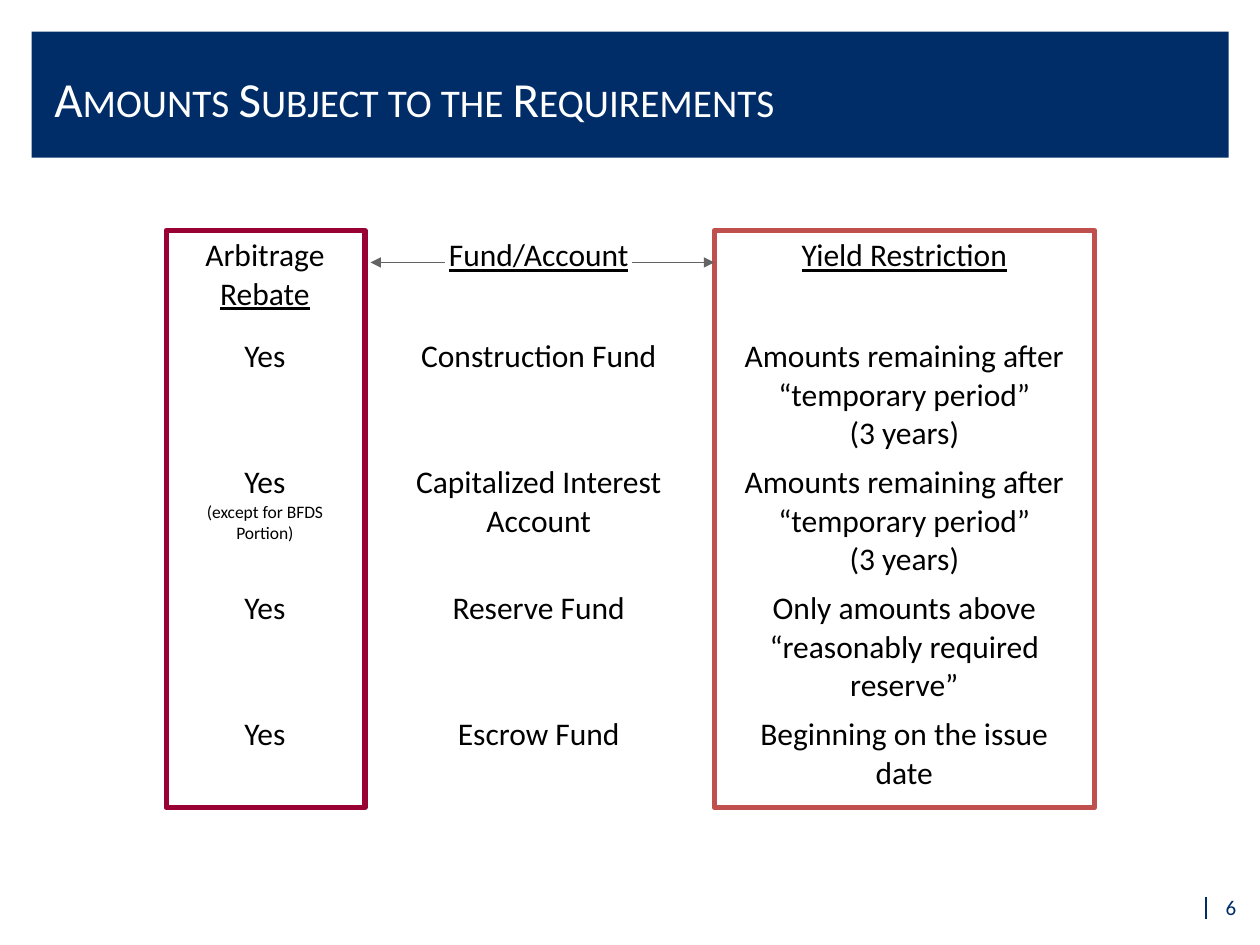
import pptx
import pptx.util
import pptx.dml.color
import pptx.enum.shapes
import pptx.enum.text
import pptx.oxml.ns
import lxml.etree

Cm = pptx.util.Cm
Pt = pptx.util.Pt
ALIGN = pptx.enum.text.PP_ALIGN
MIDDLE = pptx.enum.text.MSO_ANCHOR.MIDDLE
NAVY, BLACK, GREY = "002D68", "000000", "636463"

TEMPORARY_PERIOD = "Amounts remaining after “temporary period”\n(3 years)"
HEADINGS = ["Arbitrage Rebate", "Fund/Account", "Yield Restriction"]
ROWS = [
    ["Yes", "Construction Fund", TEMPORARY_PERIOD],
    ["Yes", "Capitalized Interest Account", TEMPORARY_PERIOD],
    ["Yes", "Reserve Fund", "Only amounts above “reasonably required reserve”"],
    ["Yes", "Escrow Fund", "Beginning on the issue date"],
]
COLUMN_WIDTHS = [3.68, 7.36, 7.38]
ROW_HEIGHTS = [2.03, 2.45, 2.45, 2.45, 1.8]


def color(hex_value):
    return pptx.dml.color.RGBColor.from_string(hex_value)


def add_run(paragraph, text, size, hex_value=BLACK, underline=False):
    """Add text in the slide's font, with a line break at each newline."""
    for index, line in enumerate(text.split("\n")):
        if index:
            paragraph.add_line_break()
        run = paragraph.add_run()
        run.text = line
        run.font.name = "Calibri"
        run.font.size = Pt(size)
        run.font.color.rgb = color(hex_value)
        run.font.underline = underline
    return run


def add_rectangle(slide, left, top, width, height, fill=None, line=None):
    shape = slide.shapes.add_shape(
        pptx.enum.shapes.MSO_SHAPE.RECTANGLE, Cm(left), Cm(top), Cm(width), Cm(height))
    shape.shadow.inherit = False
    if fill:
        shape.fill.solid()
        shape.fill.fore_color.rgb = color(fill)
    else:
        shape.fill.background()
    if line:
        shape.line.color.rgb = color(line)
        shape.line.width = Pt(3)
    else:
        shape.line.fill.background()


def add_line(slide, start, end, hex_value, width, arrow=False):
    connector = slide.shapes.add_connector(
        pptx.enum.shapes.MSO_CONNECTOR.STRAIGHT,
        Cm(start[0]), Cm(start[1]), Cm(end[0]), Cm(end[1]))
    connector.line.color.rgb = color(hex_value)
    connector.line.width = Pt(width)
    if arrow:
        line = connector.line._get_or_add_ln()
        lxml.etree.SubElement(line, pptx.oxml.ns.qn("a:tailEnd"), type="triangle")
    lxml.etree.SubElement(connector._element.spPr, pptx.oxml.ns.qn("a:effectLst"))


def format_title(slide, text):
    title = slide.shapes.title
    title.left, title.top, title.width, title.height = Cm(0.84), Cm(0.76), Cm(21.59), Cm(2.41)
    title.text_frame.vertical_anchor = MIDDLE
    paragraph = title.text_frame.paragraphs[0]
    paragraph.alignment = ALIGN.LEFT
    run = add_run(paragraph, text, 28, "FFFFFF")
    run.font._element.set("cap", "small")
    # Bring the title in front of its band
    title._element.getparent().append(title._element)


def add_page_number(slide, number):
    box = slide.shapes.add_textbox(Cm(19.25), Cm(17.78), Cm(5.92), Cm(1.02))
    box.text_frame.word_wrap = True
    box.text_frame.vertical_anchor = MIDDLE
    paragraph = box.text_frame.paragraphs[0]
    paragraph.alignment = ALIGN.RIGHT
    add_run(paragraph, number, 12, NAVY)


def add_requirements_table(slide):
    table = slide.shapes.add_table(
        len(ROW_HEIGHTS), len(COLUMN_WIDTHS), Cm(3.5), Cm(4.65),
        Cm(sum(COLUMN_WIDTHS)), Cm(sum(ROW_HEIGHTS))).table
    table.first_row = False
    table.horz_banding = False
    for column, width in zip(table.columns, COLUMN_WIDTHS):
        column.width = Cm(width)
    for row, height in zip(table.rows, ROW_HEIGHTS):
        row.height = Cm(height)

    for row_index, texts in enumerate([HEADINGS] + ROWS):
        for column_index, text in enumerate(texts):
            cell = table.cell(row_index, column_index)
            cell.fill.background()
            paragraph = cell.text_frame.paragraphs[0]
            paragraph.alignment = ALIGN.CENTER
            if text == "Arbitrage Rebate":
                # Only the second word is underlined
                add_run(paragraph, "Arbitrage ", 18)
                text = "Rebate"
            add_run(paragraph, text, 18, underline=row_index == 0)

    # Small exception below the capitalized interest answer
    note = table.cell(2, 0).text_frame.add_paragraph()
    note.alignment = ALIGN.CENTER
    add_run(note, "(except for BFDS Portion)", 10)


def main():
    presentation = pptx.Presentation()
    presentation.slide_width, presentation.slide_height = Cm(25.4), Cm(19.05)
    slide = presentation.slides.add_slide(presentation.slide_layouts[5])

    # Header band, title and page number
    add_line(slide, (24.31, 18.08), (24.31, 18.52), NAVY, 1)
    add_rectangle(slide, 0.64, 0.64, 24.13, 2.54, fill=NAVY)
    format_title(slide, "Amounts Subject to the Requirements")
    add_page_number(slide, "6")

    # Table with its two outer columns framed
    add_requirements_table(slide)
    add_rectangle(slide, 3.35, 4.65, 4.01, 11.63, line="990033")
    add_rectangle(slide, 14.4, 4.65, 7.67, 11.63, line="C0504D")

    # Arrows from the fund heading to both frames
    for start, end in [(8.97, 7.47), (12.75, 14.4)]:
        add_line(slide, (start, 5.29), (end, 5.29), GREY, 0.75, arrow=True)

    presentation.save("out.pptx")


if __name__ == "__main__":
    main()
